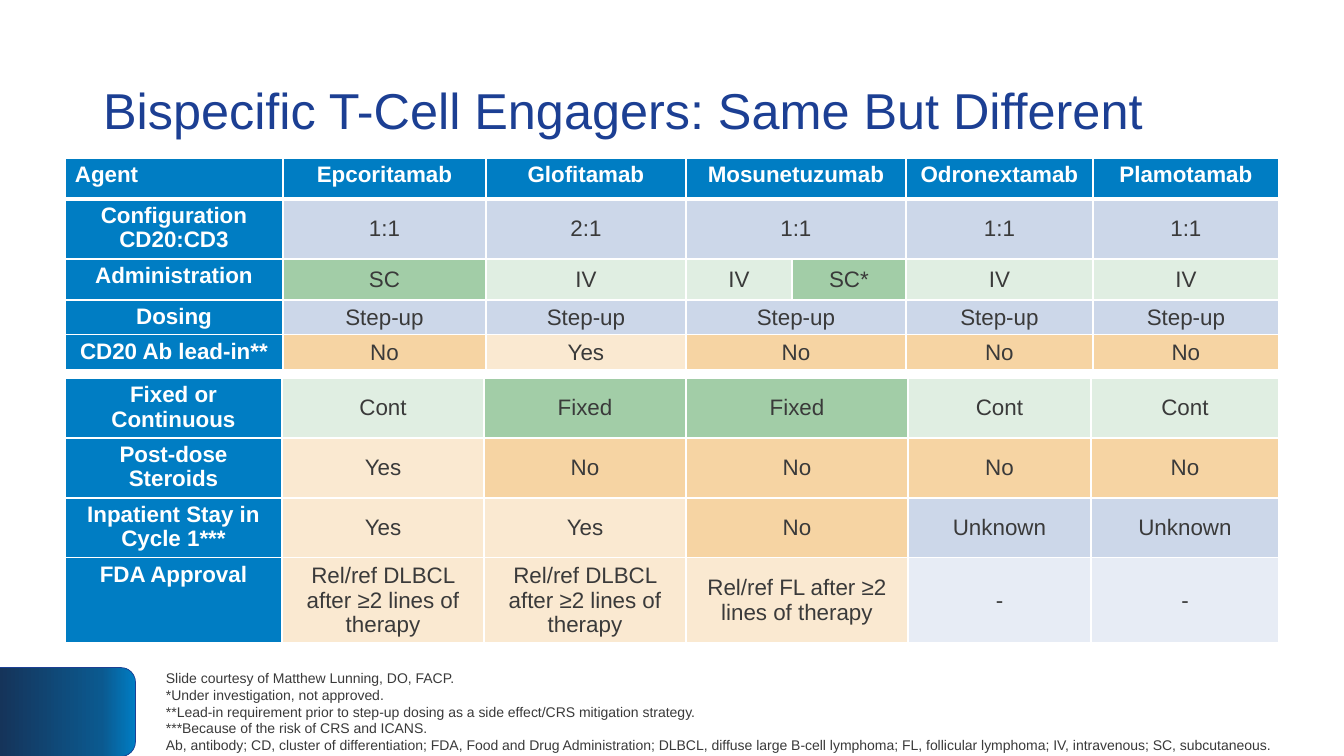
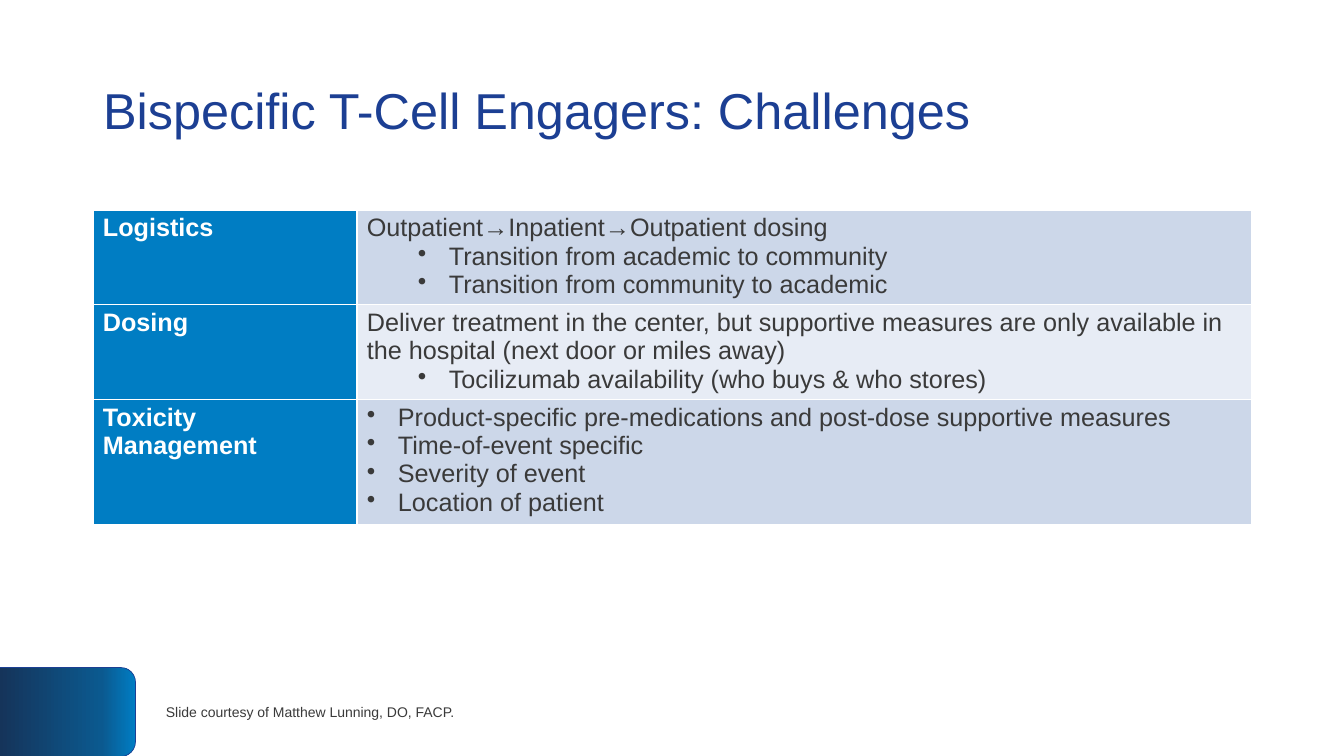
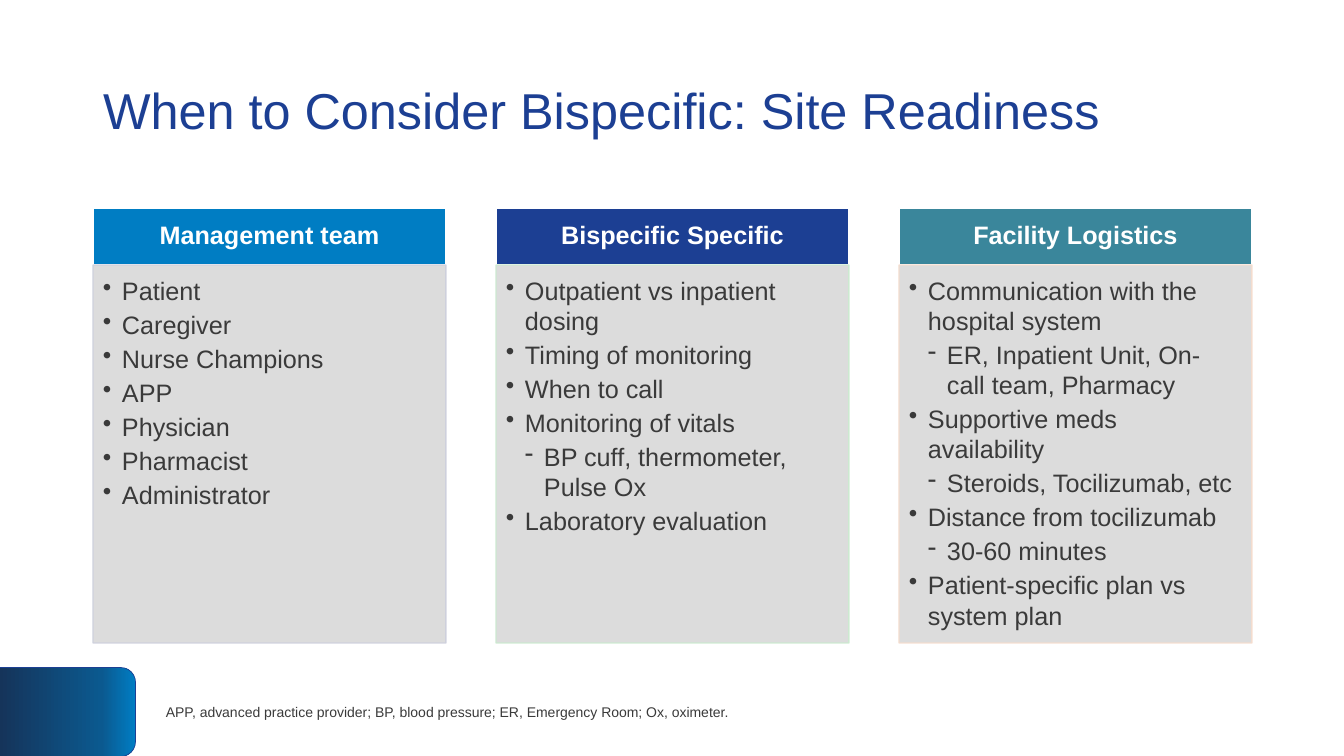
import copy

import pptx
import pptx.dml.color
import pptx.enum.shapes
import pptx.enum.text
import pptx.oxml
import pptx.oxml.ns
import pptx.util
from lxml import etree

RGBColor = pptx.dml.color.RGBColor
Pt = pptx.util.Pt
ALIGN = pptx.enum.text.PP_ALIGN
ANCHOR = pptx.enum.text.MSO_ANCHOR
SHAPE = pptx.enum.shapes.MSO_SHAPE
qn = pptx.oxml.ns.qn

EMU_PER_PX = 914400 / 100.8
FONT = "Arial"
TITLE_ONLY = 5

WHITE = RGBColor(0xFF, 0xFF, 0xFF)
INK = RGBColor(0x3A, 0x3A, 0x3A)
NAVY = RGBColor(0x1C, 0x3F, 0x93)
BLUE = RGBColor(0x00, 0x7D, 0xC3)
MID_BLUE = RGBColor(0x0B, 0x59, 0x8F)
DARK_BLUE = RGBColor(0x15, 0x34, 0x5A)
TEAL = RGBColor(0x3A, 0x86, 0x9B)
PALE_BLUE = RGBColor(0xCC, 0xD7, 0xE9)
FAINT_BLUE = RGBColor(0xE7, 0xEC, 0xF5)
GREEN = RGBColor(0xA2, 0xCD, 0xA7)
PALE_GREEN = RGBColor(0xE0, 0xEE, 0xE2)
ORANGE = RGBColor(0xF6, 0xD4, 0xA3)
PALE_ORANGE = RGBColor(0xFA, 0xE9, 0xD1)
GREY = RGBColor(0xD9, 0xD9, 0xD9)
LILAC_EDGE = RGBColor(0xCD, 0xCF, 0xDC)
GREEN_EDGE = RGBColor(0xCB, 0xEB, 0xCF)
PEACH_EDGE = RGBColor(0xF6, 0xDD, 0xCD)

DLBCL = "Rel/ref DLBCL after ≥2 lines of therapy"
FL = "Rel/ref FL after ≥2 lines of therapy"
ANSWER_FILLS = {
    "1:1": PALE_BLUE, "2:1": PALE_BLUE, "Step-up": PALE_BLUE, "Unknown": PALE_BLUE,
    "SC": GREEN, "SC*": GREEN, "Fixed": GREEN,
    "IV": PALE_GREEN, "Cont": PALE_GREEN,
    "No": ORANGE, "Yes": PALE_ORANGE, DLBCL: PALE_ORANGE, FL: PALE_ORANGE,
    "-": FAINT_BLUE,
}

# None continues the cell to its left.
DELIVERY_ROWS = [
    ["Agent", "Epcoritamab", "Glofitamab", "Mosunetuzumab", None, "Odronextamab", "Plamotamab"],
    ["Configuration CD20:CD3", "1:1", "2:1", "1:1", None, "1:1", "1:1"],
    ["Administration", "SC", "IV", "IV", "SC*", "IV", "IV"],
    ["Dosing", "Step-up", "Step-up", "Step-up", None, "Step-up", "Step-up"],
    ["CD20 Ab lead-in**", "No", "Yes", "No", None, "No", "No"],
]
COURSE_ROWS = [
    ["Fixed or Continuous", "Cont", "Fixed", "Fixed", "Cont", "Cont"],
    ["Post-dose Steroids", "Yes", "No", "No", "No", "No"],
    ["Inpatient Stay in Cycle 1***", "Yes", "Yes", "No", "Unknown", "Unknown"],
    ["FDA Approval", DLBCL, DLBCL, FL, "-", "-"],
]

COURTESY = "Slide courtesy of Matthew Lunning, DO, FACP."
AGENT_NOTES = [
    COURTESY,
    "*Under investigation, not approved.",
    "**Lead-in requirement prior to step-up dosing as a side effect/CRS mitigation strategy.",
    "***Because of the risk of CRS and ICANS.\nAb, antibody; CD, cluster of differentiation; "
    "FDA, Food and Drug Administration; DLBCL, diffuse large B-cell lymphoma; "
    "FL, follicular lymphoma; IV, intravenous; SC, subcutaneous.",
]

# Each line is (bullet indent in px, text); None means no bullet.
CHALLENGES = [
    ("Logistics", PALE_BLUE, [
        (None, "Outpatient→Inpatient→Outpatient dosing"),
        (82, "Transition from academic to community"),
        (82, "Transition from community to academic")]),
    ("Dosing", FAINT_BLUE, [
        (None, "Deliver treatment in the center, but supportive measures are only "
               "available in the hospital (next door or miles away)"),
        (82, "Tocilizumab availability (who buys & who stores)")]),
    ("Toxicity Management", PALE_BLUE, [
        (31, "Product-specific pre-medications and post-dose supportive measures"),
        (31, "Time-of-event specific"),
        (31, "Severity of event"),
        (31, "Location of patient")]),
]

# Each line is (level, text).
READINESS = [
    ("Management team", BLUE, LILAC_EDGE, [
        (0, "Patient"), (0, "Caregiver"), (0, "Nurse Champions"), (0, "APP"),
        (0, "Physician"), (0, "Pharmacist"), (0, "Administrator")]),
    ("Bispecific Specific", NAVY, GREEN_EDGE, [
        (0, "Outpatient vs inpatient dosing"), (0, "Timing of monitoring"),
        (0, "When to call"), (0, "Monitoring of vitals"),
        (1, "BP cuff, thermometer, Pulse Ox"), (0, "Laboratory evaluation")]),
    ("Facility Logistics", TEAL, PEACH_EDGE, [
        (0, "Communication with the hospital system"),
        (1, "ER, Inpatient Unit, On-call team, Pharmacy"),
        (0, "Supportive meds availability"), (1, "Steroids, Tocilizumab, etc"),
        (0, "Distance from tocilizumab"), (1, "30-60 minutes"),
        (0, "Patient-specific plan vs system plan")]),
]


def px(length):
    return pptx.util.Emu(round(length * EMU_PER_PX))


def box(*lengths):
    return [px(length) for length in lengths]


def add_text(paragraph, text, size, color, bold=False):
    """Add one run per line, with line breaks between them."""
    for number, line in enumerate(text.split("\n")):
        if number:
            paragraph.add_line_break()
        run = paragraph.add_run()
        run.text = line
        run.font.name = FONT
        run.font.size = Pt(size)
        run.font.bold = bold
        run.font.color.rgb = color


def paragraphs_for(frame, items):
    """Yield a paragraph of the frame with each item, starting with its first one."""
    for number, item in enumerate(items):
        yield (frame.add_paragraph() if number else frame.paragraphs[0]), item


def set_bullet(paragraph, char, indent, hang):
    properties = paragraph._p.get_or_add_pPr()
    properties.set("marL", str(px(indent)))
    properties.set("indent", str(-px(hang)))
    etree.SubElement(properties, qn("a:buChar")).set("char", char)


def set_insets(holder, left, top, right, bottom):
    """Set the inner margins of a text frame or a table cell."""
    holder.margin_left, holder.margin_top = px(left), px(top)
    holder.margin_right, holder.margin_bottom = px(right), px(bottom)


def add_panel(slide, bounds, fill, edge, preset=SHAPE.RECTANGLE, edge_width=1):
    panel = slide.shapes.add_shape(preset, *box(*bounds))
    panel.shadow.inherit = False
    panel.fill.solid()
    panel.fill.fore_color.rgb = fill
    panel.line.color.rgb = edge
    panel.line.width = Pt(edge_width)
    panel.text_frame.word_wrap = True
    return panel


def add_corner_tab(slide):
    tab = add_panel(slide, (23, 644, 89, 136), BLUE, NAVY, SHAPE.ROUND_2_SAME_RECTANGLE, 0.5)
    tab.rotation = 90
    tab.fill.gradient()
    tab.fill.gradient_angle = 270
    stop_list = tab.element.spPr.find(".//" + qn("a:gsLst"))
    stop_list.append(copy.deepcopy(stop_list[0]))
    shades = [(0, BLUE), (0.25, MID_BLUE), (1, DARK_BLUE)]
    for stop, (position, color) in zip(tab.fill.gradient_stops, shades):
        stop.position = position
        stop.color.rgb = color


def add_footnotes(slide, notes):
    frame = slide.shapes.add_textbox(*box(156, 667, 1174, 89)).text_frame
    frame.word_wrap = True
    frame.vertical_anchor = ANCHOR.MIDDLE
    for paragraph, note in paragraphs_for(frame, notes):
        add_text(paragraph, note, 10, INK)


def add_titled_slide(deck, heading, notes):
    """Add a slide with the shared corner tab, title and footnotes."""
    slide = deck.slides.add_slide(deck.slide_layouts[TITLE_ONLY])
    add_corner_tab(slide)
    title = slide.shapes.title
    title.left, title.top, title.width, title.height = box(93, 40, 1159, 146)
    frame = title.text_frame
    frame.auto_size = pptx.enum.text.MSO_AUTO_SIZE.NONE
    frame.word_wrap = True
    frame.vertical_anchor = ANCHOR.MIDDLE
    paragraph = frame.paragraphs[0]
    paragraph.alignment = ALIGN.LEFT
    paragraph.line_spacing = 0.9
    add_text(paragraph, heading, 36, NAVY)
    add_footnotes(slide, notes)
    return slide


def add_grid(slide, left, top, widths, heights):
    """Add a table without banding, sized by its columns and rows."""
    frame = slide.shapes.add_table(len(heights), len(widths),
                                   *box(left, top, sum(widths), sum(heights)))
    table = frame.table
    table.first_row = table.horz_banding = False
    for column, width in zip(table.columns, widths):
        column.width = px(width)
    for row, height in zip(table.rows, heights):
        row.height = px(height)
    return table


def style_cell(cell, fill, top_border=1, bottom_border=1):
    cell.fill.solid()
    cell.fill.fore_color.rgb = fill
    properties = cell._tc.get_or_add_tcPr()
    sides = [("L", 1), ("R", 1), ("T", top_border), ("B", bottom_border)]
    for place, (side, width) in enumerate(sides):
        border = etree.Element(qn("a:ln" + side), w=str(Pt(width)))
        solid = etree.SubElement(border, qn("a:solidFill"))
        etree.SubElement(solid, qn("a:srgbClr")).set("val", str(WHITE))
        properties.insert(place, border)


def anchor_cell(cell, anchor):
    """Anchor the text, with margins tight enough to keep the row height."""
    cell.vertical_anchor = anchor
    top, bottom = (2, 2) if anchor == ANCHOR.MIDDLE else (4, 0)
    set_insets(cell, 10, top, 10, bottom)


def add_agent_table(slide, top, widths, heights, rows, has_header=False):
    table = add_grid(slide, 65, top, widths, heights)
    for r, row in enumerate(rows):
        is_header = has_header and r == 0
        for c, text in enumerate(row):
            cell = table.cell(r, c)
            is_label = is_header or c == 0
            fill = BLUE if is_label else ANSWER_FILLS.get(text or row[c - 1])
            style_cell(cell, fill,
                       top_border=3 if has_header and r == 1 else 1,
                       bottom_border=3 if is_header else 1)
            anchor_cell(cell, ANCHOR.TOP if is_label else ANCHOR.MIDDLE)
            if text is None:
                table.cell(r, c - 1).merge(cell)
                continue
            paragraph = cell.text_frame.paragraphs[0]
            paragraph.alignment = ALIGN.LEFT if is_header and c == 0 else ALIGN.CENTER
            add_text(paragraph, text, 16, WHITE if is_label else INK, is_label)


def add_challenge_table(slide):
    table = add_grid(slide, 93, 210, [264, 895], [94, 95, 123])
    for r, (label, fill, lines) in enumerate(CHALLENGES):
        label_cell, detail_cell = table.cell(r, 0), table.cell(r, 1)
        for cell, cell_fill in ((label_cell, BLUE), (detail_cell, fill)):
            style_cell(cell, cell_fill)
            anchor_cell(cell, ANCHOR.TOP)
        add_text(label_cell.text_frame.paragraphs[0], label, 18, WHITE, True)
        for paragraph, (indent, text) in paragraphs_for(detail_cell.text_frame, lines):
            if indent:
                set_bullet(paragraph, "•", indent, 31)
            add_text(paragraph, text, 18, INK)


def make_translucent(panel, percent):
    for color in panel.element.spPr.iter(qn("a:srgbClr")):
        etree.SubElement(color, qn("a:alpha")).set("val", str(percent * 1000))


def add_readiness_card(slide, left, heading, fill, edge, lines):
    width, top, heading_height = 353, 208, 57
    banner = add_panel(slide, (left, top, width, heading_height), fill, WHITE)
    set_insets(banner.text_frame, 14, 8, 14, 8)
    banner.text_frame.vertical_anchor = ANCHOR.MIDDLE
    paragraph = banner.text_frame.paragraphs[0]
    paragraph.alignment = ALIGN.CENTER
    paragraph.line_spacing = 0.9
    add_text(paragraph, heading, 18, WHITE, True)

    body = add_panel(slide, (left, top + heading_height, width, 378), GREY, edge)
    make_translucent(body, 90)
    set_insets(body.text_frame, 10, 10, 14, 16)
    body.text_frame.vertical_anchor = ANCHOR.TOP
    for paragraph, (level, text) in paragraphs_for(body.text_frame, lines):
        set_bullet(paragraph, "•-"[level], 19 * (level + 1), 19)
        paragraph.level = level
        paragraph.alignment = ALIGN.LEFT
        paragraph.space_after = Pt(2.7)
        add_text(paragraph, text, 18, INK)


def main():
    deck = pptx.Presentation()
    deck.slide_width, deck.slide_height = box(1344, 756)

    agents = add_titled_slide(deck, "Bispecific T-Cell Engagers: Same But Different", AGENT_NOTES)
    add_agent_table(agents, 158, [218, 203, 200, 106, 114, 187, 186],
                    [41, 60, 41, 35, 35], DELIVERY_ROWS, has_header=True)
    add_agent_table(agents, 378, [217, 202, 202, 222, 183, 188],
                    [60, 60, 60, 85], COURSE_ROWS)

    challenges = add_titled_slide(deck, "Bispecific T-Cell Engagers: Challenges", [COURTESY])
    add_challenge_table(challenges)

    readiness = add_titled_slide(
        deck, "When to Consider Bispecific: Site Readiness",
        ["APP, advanced practice provider; BP, blood pressure; ER, Emergency Room; Ox, oximeter."])
    for number, card in enumerate(READINESS):
        add_readiness_card(readiness, 93 + 403 * number, *card)

    deck.save("out.pptx")


if __name__ == "__main__":
    main()
